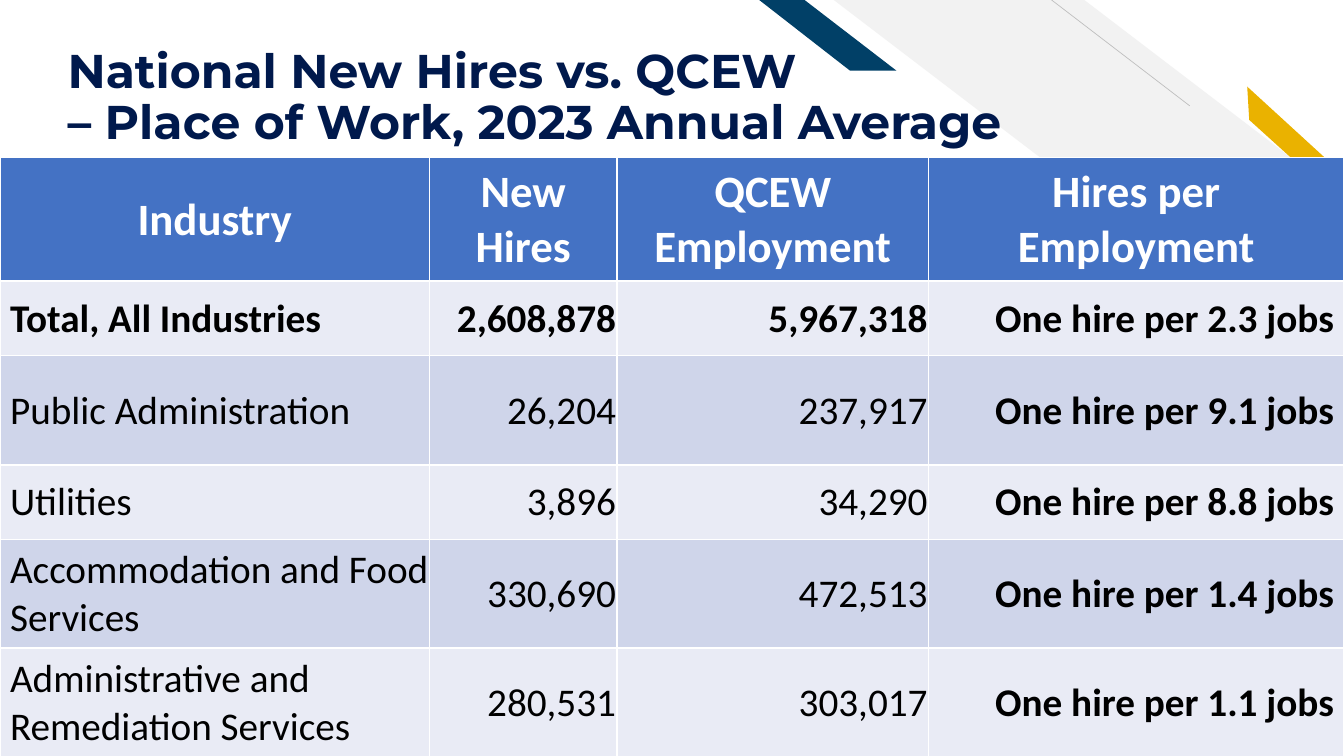
import dataclasses

import lxml.etree
import pptx
import pptx.dml.color
import pptx.enum.dml
import pptx.enum.shapes
import pptx.enum.text
import pptx.oxml.ns
import pptx.util

PX = 9144  # EMU in one px, 100 px to the inch
ALIGN = pptx.enum.text.PP_ALIGN
ANCHOR = pptx.enum.text.MSO_ANCHOR


@dataclasses.dataclass(frozen=True)
class Theme:
    navy: str = "00194C"
    teal: str = "014067"
    gold: str = "EAB200"
    pale: str = "F2F2F2"
    grey: str = "BFBFBF"
    head: str = "4472C4"
    bands: tuple = ("E9EBF5", "CFD5EA")
    white: str = "FFFFFF"
    black: str = "000000"
    title_font: str = "Montserrat"
    table_font: str = "Calibri"
    title_size: float = 33.8
    head_size: int = 32
    cell_size: int = 28
    thin: float = 0.5
    rule: float = 1
    thick: float = 1.5


def color(code):
    return pptx.dml.color.RGBColor.from_string(code)


def apply(target, values):
    for name, value in values.items():
        setattr(target, name, value)


def margins(left, top, right, bottom):
    sides = dict(left=left, top=top, right=right, bottom=bottom)
    return {f"margin_{side}": size * PX for side, size in sides.items()}


class Deck:
    def __init__(self, theme, width, height):
        self.theme = theme
        self.file = pptx.Presentation()
        apply(self.file, {"slide_width": width * PX, "slide_height": height * PX})
        self.slide = self.file.slides.add_slide(self.file.slide_layouts[5])
        self.shapes = self.slide.shapes

    def paint(self, shape, fill):
        shape.shadow.inherit = False
        shape.fill.solid()
        shape.fill.fore_color.rgb = color(fill)
        shape.line.fill.background()

    def stripe(self, box, ratio, fill):
        """Draw a diagonal stripe that falls from left to right."""
        kind = pptx.enum.shapes.MSO_SHAPE.DIAGONAL_STRIPE
        shape = self.shapes.add_shape(kind, *(v * PX for v in box))
        shape.adjustments[0] = ratio
        shape._element.spPr.xfrm.set("flipH", "1")
        self.paint(shape, fill)

    def outline(self, points, fill):
        pen = self.shapes.build_freeform(*points[0], scale=PX)
        pen.add_line_segments(points[1:], close=True)
        self.paint(pen.convert_to_shape(), fill)

    def line(self, start, end, tone, width):
        kind = pptx.enum.shapes.MSO_CONNECTOR.STRAIGHT
        line = self.shapes.add_connector(kind, *(v * PX for v in start + end))
        line.line.color.rgb = color(tone)
        line.line.width = pptx.util.Pt(width)
        props = line._element.spPr
        lxml.etree.SubElement(props, pptx.oxml.ns.qn("a:effectLst"))

    def font(self, target, name, size, tone, bold):
        apply(target, {"name": name, "size": pptx.util.Pt(size), "bold": bold})
        target.color.rgb = color(tone)

    def title(self, lines, box):
        """Fill the title and lift it above the shapes drawn so far."""
        title = self.shapes.title
        title._element.getparent().append(title._element)
        apply(title, dict(zip(("left", "top", "width", "height"),
                              (v * PX for v in box))))
        frame = title.text_frame
        apply(frame, {"word_wrap": True, "vertical_anchor": ANCHOR.BOTTOM,
                      "auto_size": pptx.enum.text.MSO_AUTO_SIZE.NONE,
                      **margins(10, 5, 10, 0)})
        para = frame.paragraphs[0]
        apply(para, {"alignment": ALIGN.LEFT, "line_spacing": 0.9})
        for index, text in enumerate(lines):
            if index:
                para.add_line_break()
            run = para.add_run()
            run.text = text
            self.font(run.font, self.theme.title_font, self.theme.title_size,
                      self.theme.navy, True)

    def borders(self, cell, widths):
        props = cell._tc.get_or_add_tcPr()
        for side, width in widths.items():
            edge = lxml.etree.SubElement(
                props, pptx.oxml.ns.qn(f"a:ln{side}"), w=str(pptx.util.Pt(width)))
            fill = lxml.etree.SubElement(edge, pptx.oxml.ns.qn("a:solidFill"))
            lxml.etree.SubElement(fill, pptx.oxml.ns.qn("a:srgbClr"),
                                  val=self.theme.white)

    def cell(self, cell, text, row, col, last):
        look = self.theme
        head = row == 0
        odd = row % 2 == 1
        self.borders(cell, {"L": look.rule, "R": look.rule,
                            "T": look.thick if odd else look.rule,
                            "B": look.rule if odd else look.thick})
        cell.fill.solid()
        cell.fill.fore_color.rgb = color(look.head if head else look.bands[not odd])
        left = 10 if col == 0 and not head else 1
        right = 10 if col == last and not head else 1
        apply(cell, {"vertical_anchor": ANCHOR.MIDDLE, **margins(left, 1, right, 0)})
        cell.text = text
        para = cell.text_frame.paragraphs[0]
        side = ALIGN.LEFT if col == 0 else ALIGN.RIGHT
        para.alignment = ALIGN.CENTER if head else side
        self.font(para.runs[0].font, look.table_font,
                  look.head_size if head else look.cell_size,
                  look.white if head else look.black,
                  row < 2 or col == last)

    def table(self, rows, left, top, widths, heights):
        frame = self.shapes.add_table(
            len(rows), len(widths), left * PX, top * PX,
            sum(widths) * PX, sum(heights) * PX)
        table = frame.table
        for col, width in zip(table.columns, widths):
            col.width = width * PX
        for row, height in zip(table.rows, heights):
            row.height = height * PX
        for r, row in enumerate(rows):
            for c, text in enumerate(row):
                self.cell(table.cell(r, c), text, r, c, len(widths) - 1)


def main():
    look = Theme()
    deck = Deck(look, 1333, 750)

    deck.stripe((827, 0, 507, 387), 0.51, look.pale)
    deck.line((1180, 105), (1043, 0), look.grey, look.thin)
    deck.outline([(1335, 206), (1332, 173), (1237, 86), (1239, 119)], look.gold)
    deck.outline([(889, 70), (798, 0), (753, 0), (843, 70)], look.teal)

    deck.title(["National New Hires vs. QCEW",
                "– Place of Work, 2023 Annual Average"], (57, 23, 1220, 126))

    jobs = [
        ("Total, All Industries", "2,608,878", "5,967,318", "2.3"),
        ("Public Administration", "26,204", "237,917", "9.1"),
        ("Utilities", "3,896", "34,290", "8.8"),
        ("Accommodation and Food Services", "330,690", "472,513", "1.4"),
        ("Administrative and Remediation Services", "280,531", "303,017", "1.1"),
    ]
    rows = [("Industry", "New Hires", "QCEW Employment", "Hires per Employment")]
    rows += [(*facts, f"One hire per {rate} jobs") for *facts, rate in jobs]
    deck.table(rows, 0, 156, (426, 186, 309, 412), (123, 74, 108, 74, 108, 108))

    deck.file.save("out.pptx")


if __name__ == "__main__":
    main()
